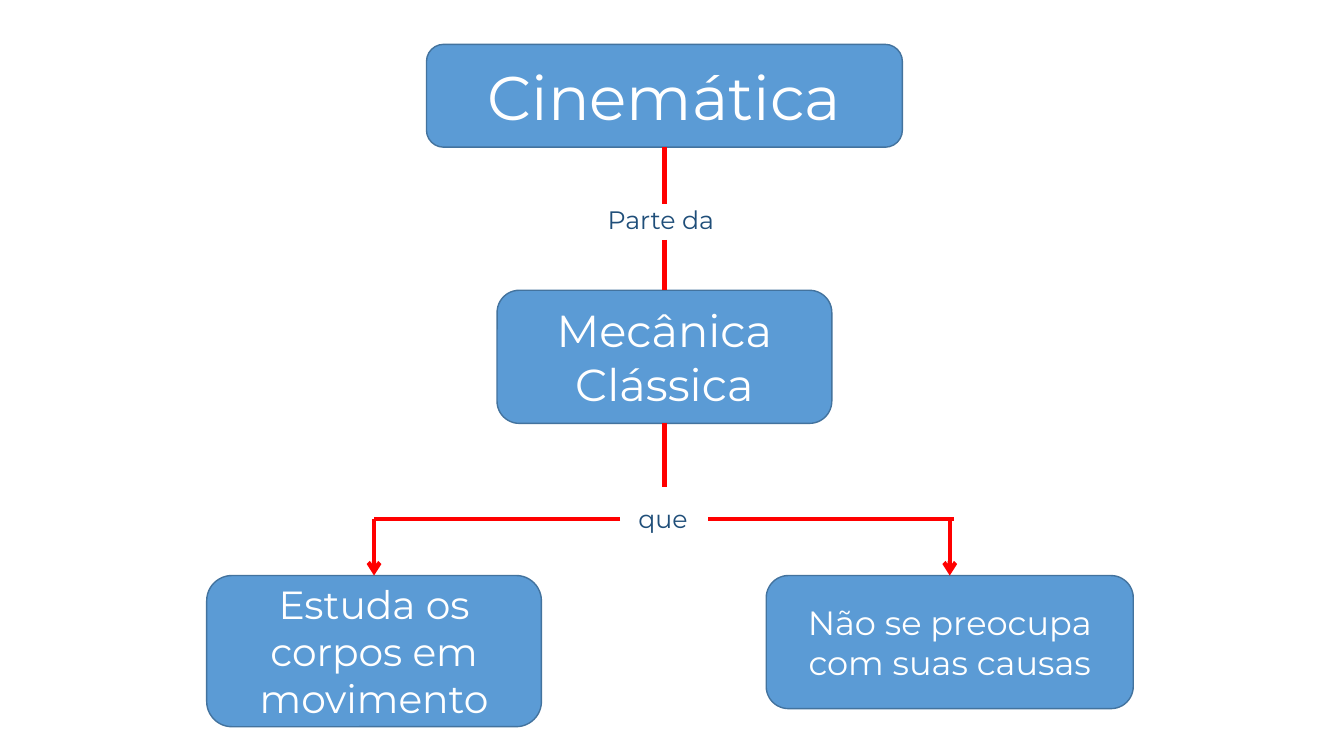
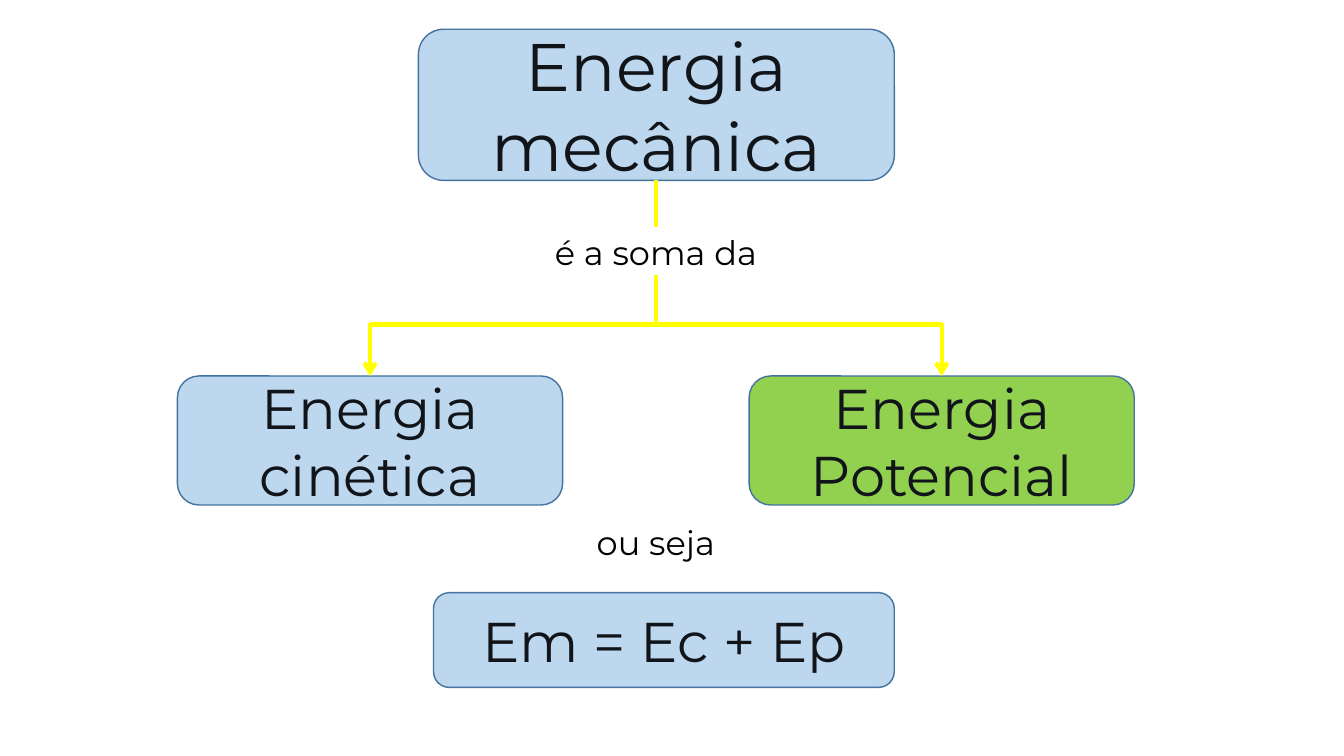
from lxml import etree
from pptx import Presentation
from pptx.dml.color import RGBColor
from pptx.enum.shapes import MSO_CONNECTOR, MSO_SHAPE
from pptx.enum.text import MSO_ANCHOR, PP_ALIGN
from pptx.oxml.ns import qn
from pptx.util import Pt

PX = 9144  # EMU in one px, with 100 px to the inch
STRAIGHT = MSO_CONNECTOR.STRAIGHT
ROUNDED = MSO_SHAPE.ROUNDED_RECTANGLE
MIDDLE = MSO_ANCHOR.MIDDLE
CENTER = PP_ALIGN.CENTER
TOP, BOTTOM = 0, 2

FONT = "Montserrat"
OUTLINE = "43739E"
WHITE, BLACK, INK, NAVY = "FFFFFF", "000000", "11151A", "1F4E79"
BLUE, PALE_BLUE, GREEN = "5B9BD5", "BDD7EE", "92D050"
RED, YELLOW = "FF0000", "FFFF00"


def px(*lengths):
    return [length * PX for length in lengths]


def rgb(code):
    return RGBColor.from_string(code)


def write(shape, text, size, color):
    frame = shape.text_frame
    frame.word_wrap = True
    frame.vertical_anchor = MIDDLE
    para = frame.paragraphs[0]
    para.alignment = CENTER
    span = para.add_run()
    span.text = text
    for name, value in {"name": FONT, "size": Pt(size)}.items():
        setattr(span.font, name, value)
    span.font.color.rgb = rgb(color)


def concept(page, area, text, size, color, fill):
    box = page.shapes.add_shape(ROUNDED, *px(*area))
    box.shadow.inherit = False
    box.fill.solid()
    box.fill.fore_color.rgb = rgb(fill)
    box.line.color.rgb = rgb(OUTLINE)
    box.line.width = Pt(1)
    write(box, text, size, color)
    return box


def label(page, area, text, size, color):
    write(page.shapes.add_textbox(*px(*area)), text, size, color)


def link(page, start, end, color, arrow=False):
    """Draw a line; each end is an (x, y) point or a box, left at its bottom and reached at its top."""
    start_point = px(*start) if isinstance(start, tuple) else (0, 0)
    end_point = px(*end) if isinstance(end, tuple) else (0, 0)
    line = page.shapes.add_connector(STRAIGHT, *start_point, *end_point)
    if not isinstance(start, tuple):
        line.begin_connect(start, BOTTOM)
    if not isinstance(end, tuple):
        line.end_connect(end, TOP)
    line.line.color.rgb = rgb(color)
    line.line.width = Pt(3)
    properties = line._element.spPr
    if arrow:
        etree.SubElement(properties.find(qn("a:ln")), qn("a:tailEnd"), type="arrow")
    etree.SubElement(properties, qn("a:effectLst"))


def kinematics(page):
    title = concept(page, (423, 44, 472, 102), "Cinemática", 44, WHITE, BLUE)
    mechanics = concept(page, (493, 288, 332, 132), "Mecânica Clássica", 32, WHITE, BLUE)
    motion = concept(page, (205, 571, 332, 150), "Estuda os corpos em movimento", 28, WHITE, BLUE)
    causes = concept(page, (760, 571, 364, 132), "Não se preocupa com suas causas", 24, WHITE, BLUE)
    label(page, (557, 186, 197, 63), "Parte da", 18, NAVY)
    label(page, (559, 483, 197, 63), "que", 18, NAVY)
    link(page, title, (659, 202), RED)
    link(page, (659, 238), mechanics, RED)
    link(page, mechanics, (659, 483), RED)
    link(page, (615, 515), (371, 515), RED)
    link(page, (946, 515), (702, 515), RED)
    for box, center in ((motion, 371), (causes, 942)):
        link(page, (center, 515), box, RED, arrow=True)


def energy(page):
    title = concept(page, (415, 29, 472, 150), "Energia mecânica", 48, INK, PALE_BLUE)
    label(page, (493, 203, 315, 94), "é a soma da", 24, BLACK)
    link(page, title, (651, 225), YELLOW)
    link(page, (651, 273), (651, 322), YELLOW)
    link(page, (367, 322), (934, 322), YELLOW)
    branches = ((176, "Energia cinética", PALE_BLUE), (743, "Energia Potencial", GREEN))
    for left, text, fill in branches:
        box = concept(page, (left, 373, 382, 128), text, 40, INK, fill)
        link(page, (left + 191, 320), box, YELLOW, arrow=True)
    label(page, (493, 504, 315, 68), "ou seja", 24, BLACK)
    concept(page, (430, 588, 457, 94), "Em = Ec + Ep", 40, INK, PALE_BLUE)


def main():
    deck = Presentation()
    deck.slide_width, deck.slide_height = px(1333, 750)
    blank = deck.slide_layouts[6]
    for build in (kinematics, energy):
        build(deck.slides.add_slide(blank))
    deck.save("out.pptx")


if __name__ == "__main__":
    main()
